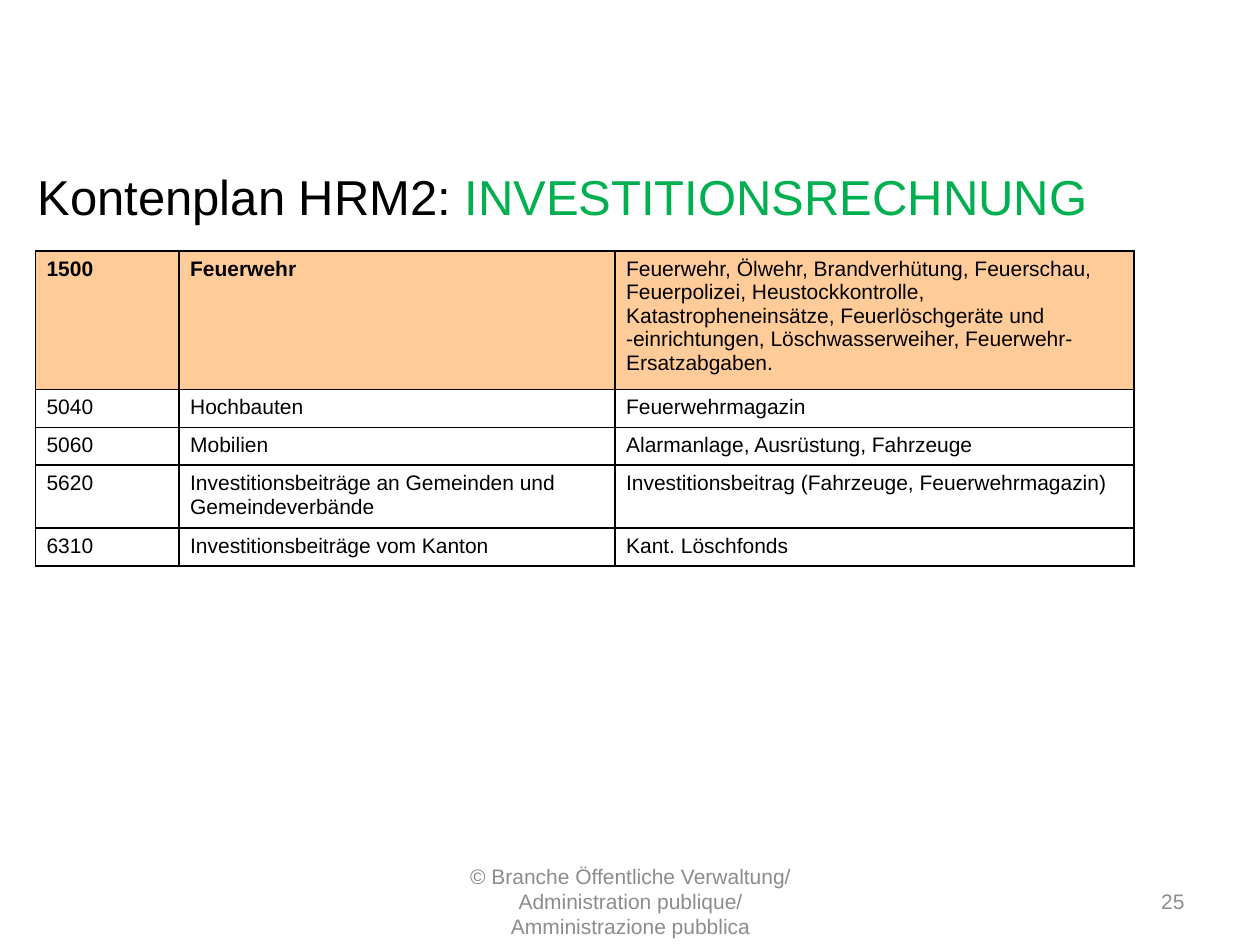
from dataclasses import dataclass

from lxml import etree
from pptx import Presentation
from pptx.dml.color import RGBColor
from pptx.enum.text import MSO_ANCHOR, PP_ALIGN
from pptx.oxml.ns import qn
from pptx.util import Inches, Pt

LEFT, CENTER, RIGHT = PP_ALIGN.LEFT, PP_ALIGN.CENTER, PP_ALIGN.RIGHT
MIDDLE, TOP = MSO_ANCHOR.MIDDLE, MSO_ANCHOR.TOP


@dataclass(frozen=True)
class Theme:
    font: str = "Arial"
    text: str = "000000"
    accent: str = "00B050"
    muted: str = "8C8C8C"
    header: str = "FFCC99"
    border: str = "000000"
    title_size: int = 28
    body_size: int = 12
    border_width: int = 1


class SlideBuilder:
    def __init__(self, slide, theme):
        self.slide = slide
        self.theme = theme

    def add_run(self, p, text, size, color, bold=False):
        r = p.add_run()
        r.text = text
        r.font.name = self.theme.font
        r.font.size = Pt(size)
        r.font.bold = bold
        r.font.color.rgb = RGBColor.from_string(color)

    def text(self, box, runs, size, align=LEFT):
        """Add a text box; runs is a list of (text, color) pairs."""
        tf = self.slide.shapes.add_textbox(*map(Inches, box)).text_frame
        tf.word_wrap = True
        tf.vertical_anchor = MIDDLE
        p = tf.paragraphs[0]
        p.alignment = align
        for text, color in runs:
            self.add_run(p, text, size, color)

    def border(self, cell):
        tc_pr = cell._tc.get_or_add_tcPr()
        for i, side in enumerate(("lnL", "lnR", "lnT", "lnB")):
            ln = etree.Element(qn(f"a:{side}"), w=str(Pt(self.theme.border_width)))
            fill = etree.SubElement(ln, qn("a:solidFill"))
            etree.SubElement(fill, qn("a:srgbClr"), val=self.theme.border)
            tc_pr.insert(i, ln)

    def cell(self, cell, text, header, bold):
        cell.margin_left = cell.margin_right = Inches(0.09)
        cell.margin_top = cell.margin_bottom = Inches(0.05)
        cell.vertical_anchor = TOP
        if header:
            cell.fill.solid()
            cell.fill.fore_color.rgb = RGBColor.from_string(self.theme.header)
        else:
            cell.fill.background()
        self.border(cell)
        p = cell.text_frame.paragraphs[0]
        self.add_run(p, text, self.theme.body_size, self.theme.text, bold)

    def table(self, left, top, widths, heights, rows):
        """Add a table whose first row is shaded, with a bold number and name."""
        table = self.slide.shapes.add_table(
            len(rows), len(widths), Inches(left), Inches(top),
            Inches(sum(widths)), Inches(sum(heights))).table
        table.first_row = table.horz_banding = False
        for column, width in zip(table.columns, widths):
            column.width = Inches(width)
        for row, height in zip(table.rows, heights):
            row.height = Inches(height)
        for i, row in enumerate(rows):
            for j, text in enumerate(row):
                header = i == 0
                self.cell(table.cell(i, j), text, header, header and j < 2)


ACCOUNTS = [
    ("1500", "Feuerwehr",
     "Feuerwehr, Ölwehr, Brandverhütung, Feuerschau, Feuerpolizei, "
     "Heustockkontrolle, Katastropheneinsätze, Feuerlöschgeräte und "
     "-einrichtungen, Löschwasserweiher, Feuerwehr-Ersatzabgaben."),
    ("5040", "Hochbauten", "Feuerwehrmagazin"),
    ("5060", "Mobilien", "Alarmanlage, Ausrüstung, Fahrzeuge"),
    ("5620", "Investitionsbeiträge an Gemeinden und Gemeindeverbände",
     "Investitionsbeitrag (Fahrzeuge, Feuerwehrmagazin)"),
    ("6310", "Investitionsbeiträge vom Kanton", "Kant. Löschfonds"),
]


def main():
    prs = Presentation()
    prs.slide_width, prs.slide_height = Inches(10), Inches(7.5)
    theme = Theme()
    s = SlideBuilder(prs.slides.add_slide(prs.slide_layouts[6]), theme)

    # Footer and slide number
    s.text((7.17, 6.95, 2.33, 0.4), [("25", theme.muted)], theme.body_size, RIGHT)
    s.text((3.42, 6.95, 3.17, 0.4),
           [("© Branche Öffentliche Verwaltung/ Administration publique/ "
             "Amministrazione pubblica", theme.muted)], theme.body_size, CENTER)

    # Title
    s.text((0.2, 1.2, 8.87, 0.71),
           [("Kontenplan HRM2: ", theme.text),
            ("INVESTITIONSRECHNUNG", theme.accent)], theme.title_size)

    # Accounts
    s.table(0.28, 1.99, (1.14, 3.46, 4.12), (0.9, 0.3, 0.3, 0.5, 0.3), ACCOUNTS)

    prs.save("out.pptx")


if __name__ == "__main__":
    main()
